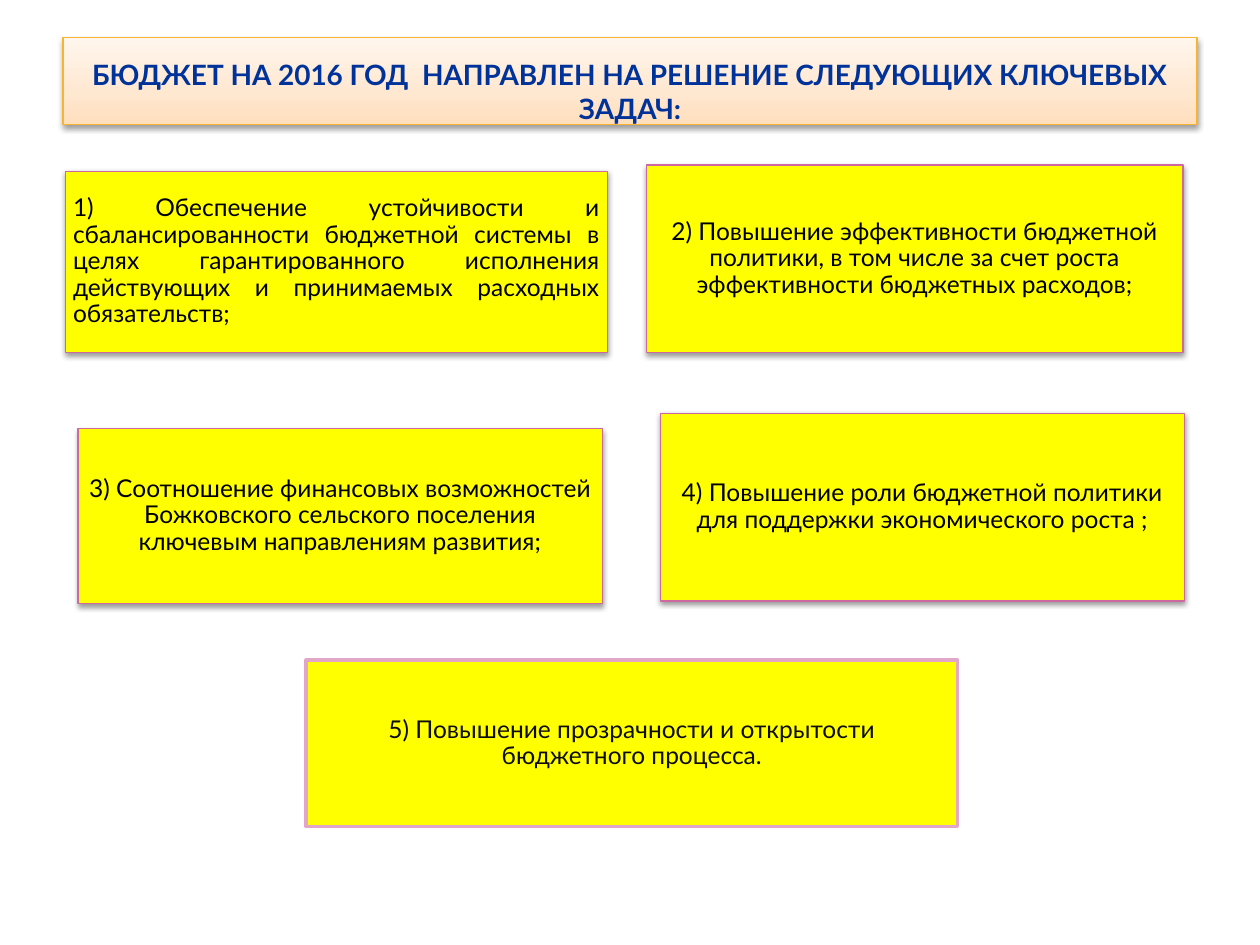
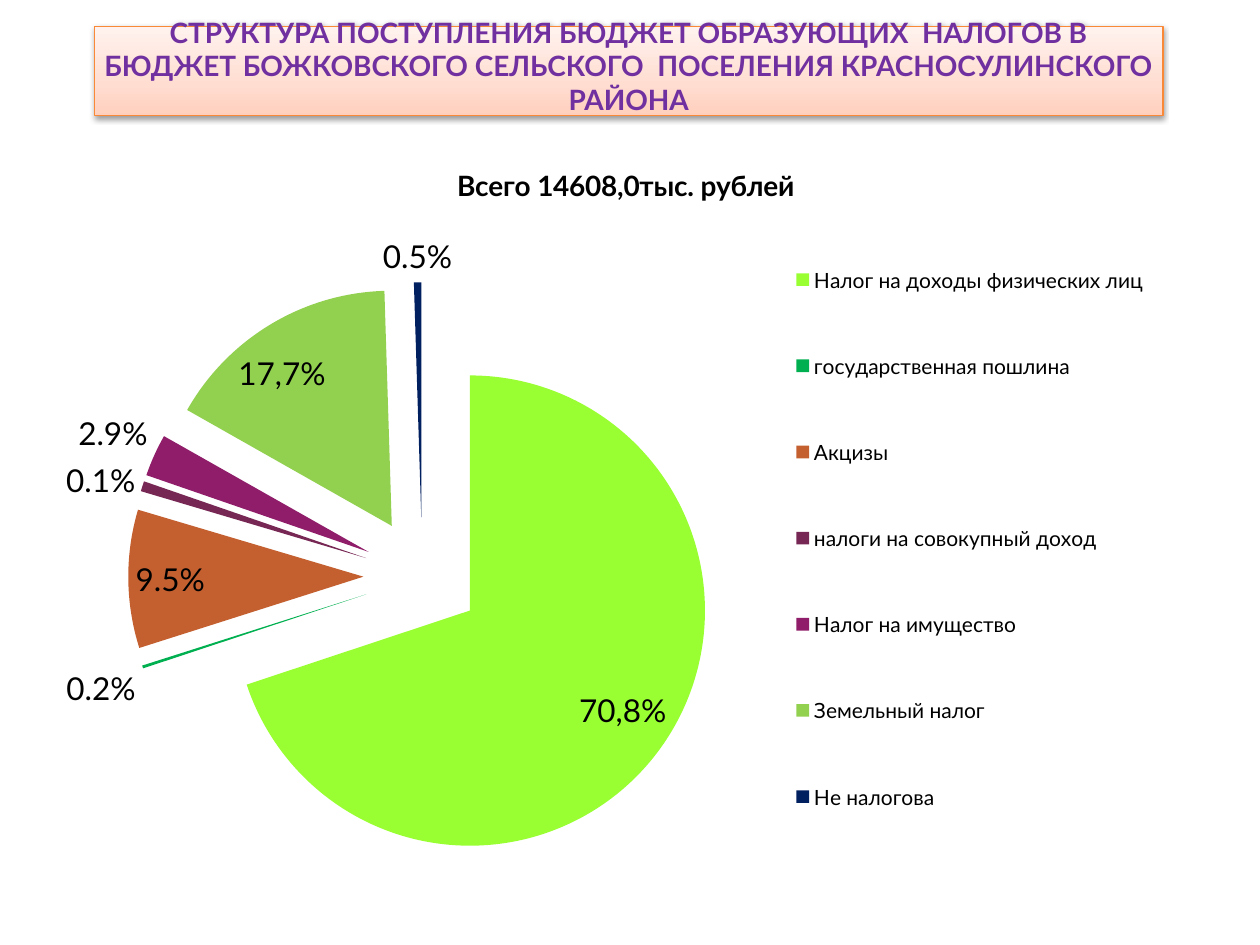
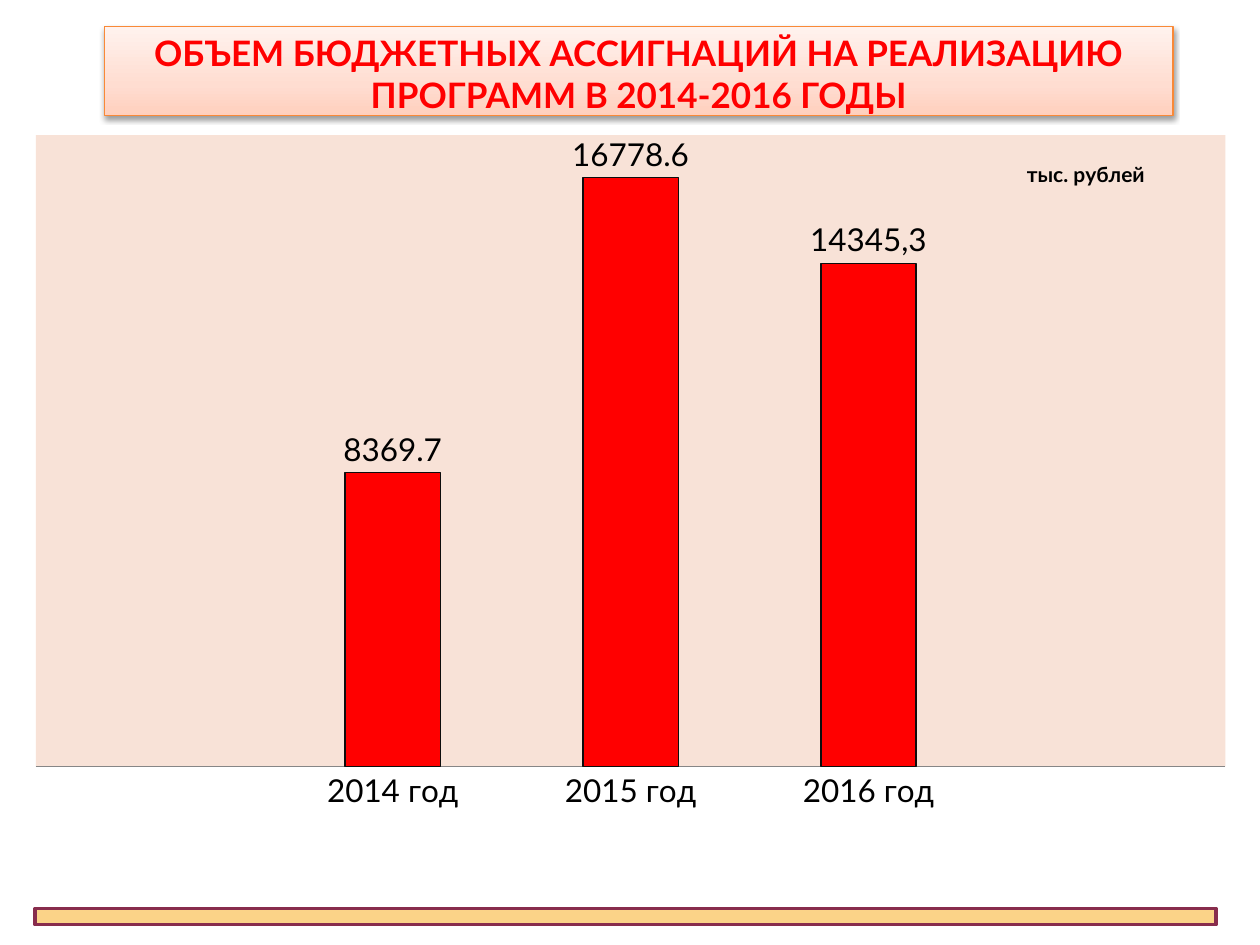
import copy

import pptx
import pptx.chart.data
import pptx.dml.color
import pptx.enum.chart
import pptx.enum.dml
import pptx.enum.shapes
import pptx.enum.text
import pptx.oxml
import pptx.oxml.ns
import pptx.util
from pptx.util import Inches, Pt

FONT = "Lato"
ALIGN = pptx.enum.text.PP_ALIGN
ANCHOR = pptx.enum.text.MSO_ANCHOR
LABEL = pptx.enum.chart.XL_LABEL_POSITION
CHART = pptx.enum.chart.XL_CHART_TYPE
NS = pptx.oxml.ns.nsdecls("a", "c")
qn = pptx.oxml.ns.qn

# Title bands: gradient stops from bottom to top, and the outline
AMBER = (("FFDEBC", "FFE7D0", "FFF6ED"), "F8B333")
CORAL = (("FFCFBD", "FFDDD1", "FFF2EE"), "F98937")

TASKS = [
    ((0.52, 1.36, 4.3, 1.44), ALIGN.JUSTIFY,
     "1) Обеспечение устойчивости и сбалансированности бюджетной системы в целях "
     "гарантированного исполнения действующих и принимаемых расходных обязательств;"),
    ((5.13, 1.31, 4.26, 1.49), ALIGN.CENTER,
     "2) Повышение эффективности бюджетной политики, в том числе за счет роста "
     "эффективности бюджетных расходов;"),
    ((0.62, 3.4, 4.16, 1.39), ALIGN.CENTER,
     "3) Соотношение финансовых возможностей Божковского сельского поселения "
     "ключевым направлениям развития;"),
    ((5.24, 3.28, 4.16, 1.49), ALIGN.CENTER,
     "4) Повышение роли бюджетной политики для поддержки экономического роста ;"),
]
LAST_TASK = ((2.43, 5.24, 5.17, 1.32), ALIGN.CENTER,
             "5) Повышение прозрачности и открытости бюджетного процесса.")

TAXES = [
    ("Налог на доходы физических лиц", 69.9, "99FF33"),
    ("государственная пошлина", 0.2, "00B050"),
    ("Акцизы", 9.5, "C46030"),
    ("налоги на совокупный доход", 0.7, "772754"),
    ("Налог на имущество", 2.9, "8F1D69"),
    ("Земельный налог", 16.3, "92D050"),
    ("Не налогова", 0.5, "002060"),
]
# Slice: label text, position, shift right and down
TAX_LABELS = {0: ("70,8%", LABEL.INSIDE_END, (0.01, -0.02)),
              2: ("9.5%", LABEL.INSIDE_END, None),
              3: ("0.1%", LABEL.OUTSIDE_END, (0, 0.02)),
              5: ("17,7%", LABEL.INSIDE_END, (-0.03, 0.03))}


def rgb(value):
    return pptx.dml.color.RGBColor.from_string(value)


def paint(target, fill, line, width):
    target.fill.solid()
    target.fill.fore_color.rgb = rgb(fill)
    target.line.color.rgb = rgb(line)
    target.line.width = Pt(width)


def set_font(font, size, color="000000", bold=False):
    font.name = FONT
    font.size = Pt(size)
    font.bold = bold
    font.color.rgb = rgb(color)


def place(shape, box):
    shape.left, shape.top, shape.width, shape.height = map(Inches, box)


def add_shadow(shape):
    shape.shadow.inherit = False
    effects = shape._element.spPr.find(qn("a:effectLst"))
    effects.append(pptx.oxml.parse_xml(
        f'<a:outerShdw {NS} blurRad="{Pt(3.1)}" dist="{Pt(1.6)}" dir="5400000" rotWithShape="0">'
        '<a:srgbClr val="000000"><a:alpha val="38000"/></a:srgbClr></a:outerShdw>'))


def set_margins(tf, side, vertical):
    tf.margin_left = tf.margin_right = Inches(side)
    tf.margin_top = tf.margin_bottom = Inches(vertical)


def title_band(s, box, text, size, color, style):
    stops, outline = style
    title = s.shapes.title
    place(title, box)
    # Three-stop gradient
    title.fill.gradient()
    title.fill.gradient_angle = 90
    stop_list = title._element.spPr.find(".//" + qn("a:gsLst"))
    stop_list.insert(1, copy.deepcopy(stop_list[0]))
    for stop, position, value in zip(title.fill.gradient_stops, (0, 0.35, 1), stops):
        stop.position = position
        stop.color.rgb = rgb(value)
    title.line.color.rgb = rgb(outline)
    title.line.width = Pt(0.75)
    add_shadow(title)
    # Text
    tf = title.text_frame
    tf.text = text
    tf.word_wrap = True
    tf.auto_size = pptx.enum.text.MSO_AUTO_SIZE.NONE
    tf.vertical_anchor = ANCHOR.BOTTOM
    set_margins(tf, 0.05, 0)
    p = tf.paragraphs[0]
    p.alignment = ALIGN.CENTER
    set_font(p.font, size, color, True)


def rectangle(s, box, fill, line, width):
    sp = s.shapes.add_shape(pptx.enum.shapes.MSO_SHAPE.RECTANGLE, *map(Inches, box))
    sp.shadow.inherit = False
    paint(sp, fill, line, width)
    return sp


def task_box(s, box, align, text, line="CD68A1", width=0.75, color="000000"):
    sp = rectangle(s, box, "FFFF00", line, width)
    tf = sp.text_frame
    tf.text = text
    tf.word_wrap = True
    tf.vertical_anchor = ANCHOR.MIDDLE
    set_margins(tf, 0.06, 0.06)
    p = tf.paragraphs[0]
    p.alignment = align
    p.line_spacing = 0.9
    set_font(p.font, 14, color)
    return sp


def set_layout(parent, index, inner=False, mode="edge", **fractions):
    """Place a chart part by fractions of the chart area."""
    for old in parent.findall(qn("c:layout")):
        parent.remove(old)
    target = '<c:layoutTarget val="inner"/>' if inner else ""
    modes = "".join(f'<c:{k}Mode val="{mode}"/>' for k in "xy")
    values = "".join(f'<c:{k} val="{v}"/>' for k, v in fractions.items())
    parent.insert(index, pptx.oxml.parse_xml(
        f"<c:layout {NS}><c:manualLayout>{target}{modes}{values}</c:manualLayout></c:layout>"))


def add_chart(s, box, kind, categories, values, title, title_size, title_at):
    data = pptx.chart.data.CategoryChartData()
    data.categories = categories
    data.add_series("Series 1", values)
    chart = s.shapes.add_chart(kind, *map(Inches, box), data).chart
    set_font(chart.font, 18)
    chart.has_legend = False
    chart.has_title = True
    tf = chart.chart_title.text_frame
    tf.text = title
    set_font(tf.paragraphs[0].font, title_size, bold=True)
    x, y = title_at
    set_layout(chart.chart_title._element, 1, x=x, y=y)
    return chart, chart.plots[0].series[0]


def point_label(series, index, text, position, shift=None):
    label = series.points[index].data_label
    label.text_frame.text = text
    set_font(label.text_frame.paragraphs[0].font, 18)
    label.position = position
    if shift:
        x, y = shift
        set_layout(label._get_or_add_dLbl(), 1, mode="factor", x=x, y=y)


def tax_pie(s, box):
    names, values, colors = zip(*TAXES)
    chart, series = add_chart(s, box, CHART.PIE, names, values,
                              "Всего 14608,0тыс. рублей", 16, (0.35, 0.02))
    set_layout(chart._chartSpace.chart.plotArea, 0, True, x=0.07, y=0.18, w=0.51, h=0.77)
    # Slices
    for i, color in enumerate(colors):
        fill = series.points[i].format.fill
        fill.solid()
        fill.fore_color.rgb = rgb(color)
    series._element.find(qn("c:dPt")).addprevious(
        pptx.oxml.parse_xml(f'<c:explosion {NS} val="25"/>'))
    # Labels
    labels = series.data_labels
    labels.show_value = False
    labels.show_percentage = True
    labels.number_format = "0.0%"
    labels.number_format_is_linked = False
    labels.position = LABEL.OUTSIDE_END
    set_font(labels.font, 18)
    for i, label in TAX_LABELS.items():
        point_label(series, i, *label)
    # Legend
    chart.has_legend = True
    legend = chart.legend
    legend.position = pptx.enum.chart.XL_LEGEND_POSITION.RIGHT
    legend.include_in_layout = False
    set_font(legend.font, 12)
    set_layout(legend._element, 1, x=0.61, y=0.08, w=0.35, h=0.87)


def program_columns(s, box):
    chart, series = add_chart(s, box, CHART.COLUMN_CLUSTERED,
                              ["", "2014 год", "2015 год", "2016 год", ""],
                              [None, 8369.7, 16778.6, 14345.3, None],
                              "тыс. рублей", 12, (0.83, 0.03))
    chart.chart_title.include_in_layout = True
    # Plot area
    plot_area = chart._chartSpace.chart.plotArea
    set_layout(plot_area, 0, True, x=0, y=0, w=1, h=0.92)
    plot_area.append(pptx.oxml.parse_xml(
        f'<c:spPr {NS}><a:solidFill><a:srgbClr val="F8E2D7"/></a:solidFill></c:spPr>'))
    # Axes
    value_axis, category_axis = chart.value_axis, chart.category_axis
    value_axis.minimum_scale, value_axis.maximum_scale = 0, 18000
    value_axis.has_major_gridlines = False
    value_axis.visible = False
    category_axis.major_tick_mark = pptx.enum.chart.XL_TICK_MARK.NONE
    category_axis.format.line.color.rgb = rgb("868686")
    category_axis.format.line.width = Pt(0.75)
    # Columns
    chart.plots[0].gap_width = 150
    chart.plots[0].vary_by_categories = False
    paint(series.format, "FF0000", "0D0D0D", 0.75)
    labels = series.data_labels
    labels.show_value = True
    labels.position = LABEL.OUTSIDE_END
    set_font(labels.font, 18)
    point_label(series, 3, "14345,3", LABEL.OUTSIDE_END)


def tasks_slide(s):
    title_band(s, (0.5, 0.3, 9, 0.69),
               "БЮДЖЕТ НА 2016 ГОД  НАПРАВЛЕН НА РЕШЕНИЕ СЛЕДУЮЩИХ КЛЮЧЕВЫХ ЗАДАЧ:",
               16, "003399", AMBER)
    for task in TASKS:
        add_shadow(task_box(s, *task))
    task_box(s, *LAST_TASK, line="E2A7C8", width=2, color="0D0D0D")


def taxes_slide(s):
    title_band(s, (0.75, 0.21, 8.48, 0.71),
               "СТРУКТУРА ПОСТУПЛЕНИЯ БЮДЖЕТ ОБРАЗУЮЩИХ  НАЛОГОВ В БЮДЖЕТ "
               "БОЖКОВСКОГО СЕЛЬСКОГО  ПОСЕЛЕНИЯ КРАСНОСУЛИНСКОГО РАЙОНА",
               16, "7030A0", CORAL)
    tax_pie(s, (0.28, 1.15, 9.45, 6.06))


def programs_slide(s):
    title_band(s, (0.83, 0.21, 8.48, 0.71),
               "ОБЪЕМ БЮДЖЕТНЫХ АССИГНАЦИЙ НА РЕАЛИЗАЦИЮ ПРОГРАММ В 2014-2016 ГОДЫ",
               20, "FF0000", CORAL)
    program_columns(s, (0.28, 1.07, 9.45, 5.45))
    rectangle(s, (0.28, 7.21, 9.37, 0.13), "FBD388", "882D4D", 2)


def main():
    prs = pptx.Presentation()
    prs.slide_width, prs.slide_height = Inches(10), Inches(7.5)
    title_only = prs.slide_layouts[5]
    for build in (tasks_slide, taxes_slide, programs_slide):
        build(prs.slides.add_slide(title_only))
    prs.save("out.pptx")


if __name__ == "__main__":
    main()
